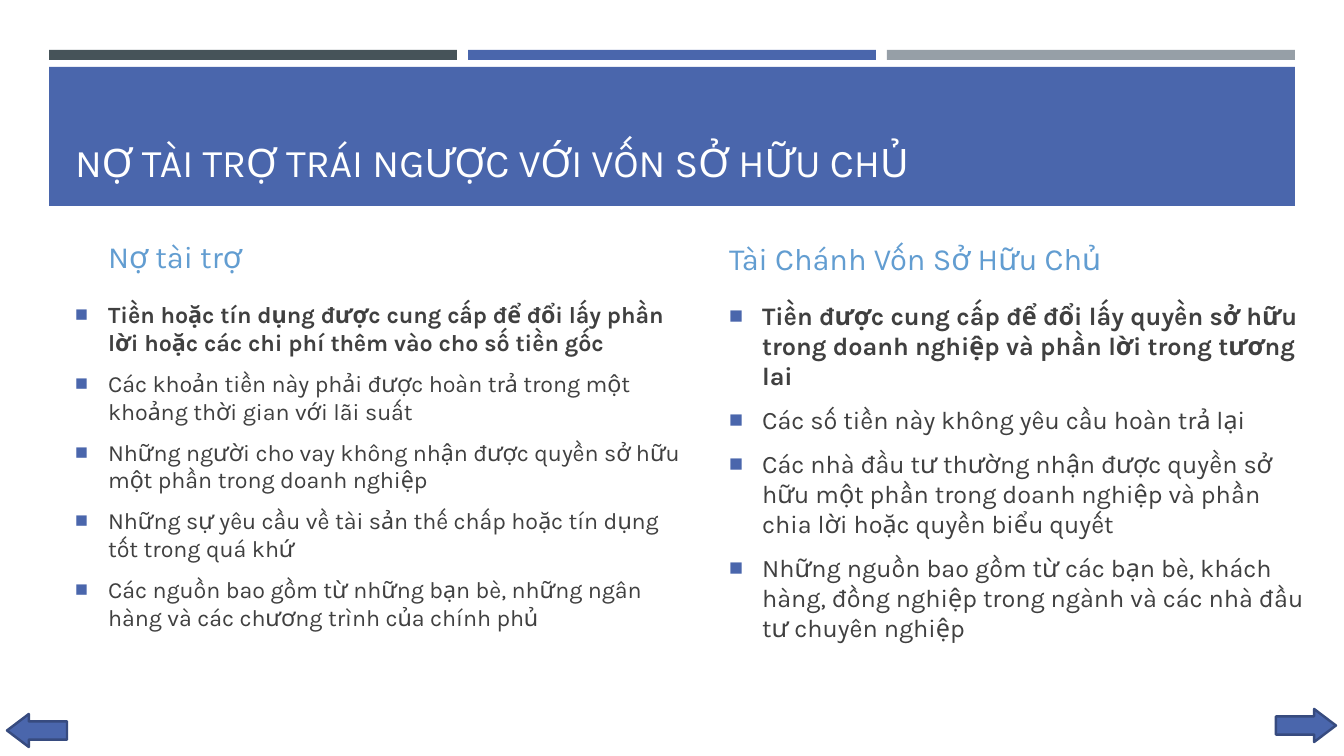
from dataclasses import dataclass

from lxml.etree import SubElement
from pptx import Presentation
from pptx.dml.color import RGBColor
from pptx.enum.shapes import MSO_SHAPE
from pptx.enum.text import MSO_ANCHOR, MSO_AUTO_SIZE, PP_ALIGN
from pptx.oxml.ns import qn
from pptx.shapes.autoshape import Shape
from pptx.slide import Slide
from pptx.util import Emu, Pt


@dataclass(frozen=True)
class Theme:
    font: str = "Karla"
    slate: str = "465359"
    blue: str = "4A66AC"
    grey: str = "969FA7"
    navy: str = "374B7F"
    sky: str = "629DD1"
    ink: str = "404040"
    white: str = "FFFFFF"
    title_size: float = 28
    heading_size: float = 22
    debt_size: float = 16.6
    equity_size: float = 18


@dataclass(frozen=True)
class Box:
    left: int
    top: int
    width: int
    height: int


@dataclass(frozen=True)
class Column:
    heading_index: int
    heading: str
    heading_box: Box
    points: tuple[str, ...]
    points_box: Box
    points_size: float


@dataclass(frozen=True)
class NavigationArrow:
    box: Box
    rotation: int


THEME = Theme()
EMU_PER_PX = 914400 / 100.8
BAR_STEP = 419
BAR_COLORS = (THEME.slate, THEME.blue, THEME.grey)
BANNER = Box(49, 67, 1246, 139)
TITLE = "NỢ TÀI TRỢ TRÁI NGƯỢC VỚI VỐN SỞ HỮU CHỦ"
TITLE_BOX = Box(65, 81, 1216, 109)

COLUMNS = (
    Column(
        1,
        "Nợ tài trợ",
        Box(98, 221, 560, 59),
        (
            "Tiền hoặc tín dụng được cung cấp để đổi lấy phần lời hoặc các chi phí thêm vào cho số tiền gốc",
            "Các khoản tiền này phải được hoàn trả trong một khoảng thời gian với lãi suất",
            "Những người cho vay không nhận được quyền sở hữu một phần trong doanh nghiệp",
            "Những sự yêu cầu về tài sản thế chấp hoặc tín dụng tốt trong quá khứ",
            "Các nguồn bao gồm từ những bạn bè, những ngân hàng và các chương trình của chính phủ",
        ),
        Box(65, 295, 634, 324),
        THEME.debt_size,
    ),
    Column(
        3,
        "Tài Chánh Vốn Sở Hữu Chủ",
        Box(719, 221, 560, 61),
        (
            "Tiền được cung cấp để đổi lấy quyền sở hữu trong doanh nghiệp và phần lời trong tương lai",
            "Các số tiền này không yêu cầu hoàn trả lại",
            "Các nhà đầu tư thường nhận được quyền sở hữu một phần trong doanh nghiệp và phần chia lời hoặc quyền biểu quyết",
            "Những nguồn bao gồm từ các bạn bè, khách hàng, đồng nghiệp trong ngành và các nhà đầu tư chuyên nghiệp",
        ),
        Box(719, 295, 601, 324),
        THEME.equity_size,
    ),
)

ARROWS = (
    NavigationArrow(Box(1276, 709, 60, 33), 0),
    NavigationArrow(Box(7, 714, 60, 33), 180),
)


def px(length: int) -> Emu:
    return Emu(round(length * EMU_PER_PX))


def add_solid(slide: Slide, preset: MSO_SHAPE, box: Box, color: str) -> Shape:
    solid = slide.shapes.add_shape(
        preset, px(box.left), px(box.top), px(box.width), px(box.height)
    )
    solid.shadow.inherit = False
    solid.fill.solid()
    solid.fill.fore_color.rgb = RGBColor.from_string(color)
    solid.line.fill.background()
    return solid


def fill_placeholder(
    slide: Slide, index: int, box: Box, text: str, size: float, color: str, anchor: MSO_ANCHOR
) -> Shape:
    holder = next(p for p in slide.placeholders if p.placeholder_format.idx == index)
    slide.shapes.element.append(holder.element)
    holder.left, holder.top = px(box.left), px(box.top)
    holder.width, holder.height = px(box.width), px(box.height)
    frame = holder.text_frame
    frame.text = text
    frame.word_wrap = True
    frame.auto_size = MSO_AUTO_SIZE.NONE
    frame.vertical_anchor = anchor
    for paragraph in frame.paragraphs:
        paragraph.alignment = PP_ALIGN.LEFT
        for run in paragraph.runs:
            run.font.name = THEME.font
            run.font.size = Pt(size)
            run.font.bold = False
            run.font.color.rgb = RGBColor.from_string(color)
    return holder


def add_column(slide: Slide, column: Column) -> None:
    heading = fill_placeholder(
        slide, column.heading_index, column.heading_box, column.heading,
        THEME.heading_size, THEME.sky, MSO_ANCHOR.BOTTOM,
    )
    heading.text_frame.paragraphs[0].space_after = Pt(6)
    points = fill_placeholder(
        slide, column.heading_index + 1, column.points_box, "\n".join(column.points),
        column.points_size, THEME.ink, MSO_ANCHOR.TOP,
    )
    for paragraph in points.text_frame.paragraphs:
        paragraph.space_after = Pt(6)
        properties = paragraph._p.get_or_add_pPr()
        properties.set("marL", str(px(33)))
        properties.set("indent", str(-px(33)))
        bullet_color = SubElement(properties, qn("a:buClr"))
        SubElement(bullet_color, qn("a:srgbClr"), val=THEME.blue)
        SubElement(properties, qn("a:buSzPct"), val="92000")
        SubElement(properties, qn("a:buChar"), char="■")
    points.text_frame.paragraphs[0].runs[0].font.bold = True


def add_navigation(slide: Slide, navigation: NavigationArrow) -> None:
    arrow = add_solid(slide, MSO_SHAPE.RIGHT_ARROW, navigation.box, THEME.blue)
    arrow.adjustments[0] = 0.55
    arrow.adjustments[1] = 0.66
    arrow.rotation = navigation.rotation
    arrow.line.color.rgb = RGBColor.from_string(THEME.navy)
    arrow.line.width = Pt(1.75)


def main() -> None:
    presentation = Presentation()
    presentation.slide_width, presentation.slide_height = px(1344), px(756)
    slide = presentation.slides.add_slide(presentation.slide_layouts[4])
    for position, color in enumerate(BAR_COLORS):
        bar = Box(BANNER.left + position * BAR_STEP, 50, 408, 10)
        add_solid(slide, MSO_SHAPE.RECTANGLE, bar, color)
    add_solid(slide, MSO_SHAPE.RECTANGLE, BANNER, THEME.blue)
    fill_placeholder(
        slide, 0, TITLE_BOX, TITLE, THEME.title_size, THEME.white, MSO_ANCHOR.BOTTOM
    )
    for column in COLUMNS:
        add_column(slide, column)
    for navigation in ARROWS:
        add_navigation(slide, navigation)
    presentation.save("out.pptx")


if __name__ == "__main__":
    main()
